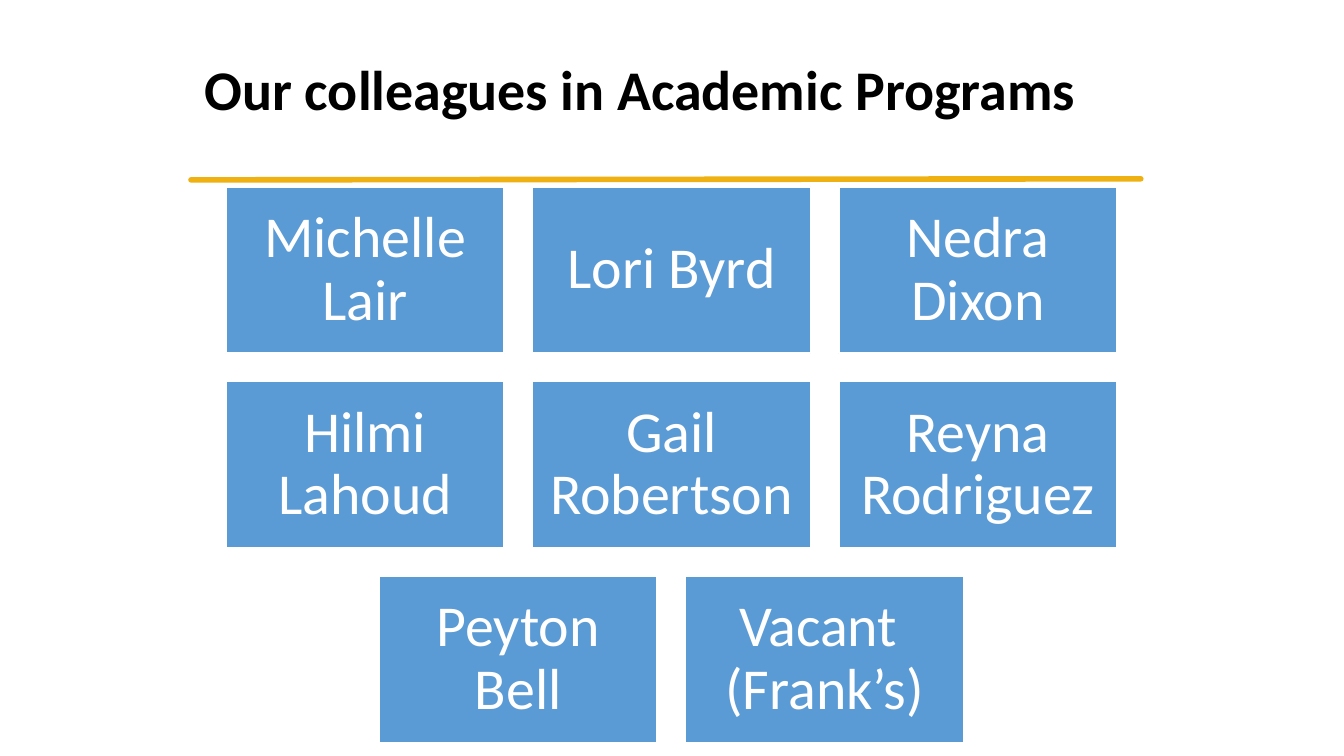
from pptx import Presentation
from pptx import util as u
from pptx.dml.color import RGBColor
from pptx.enum import shapes, text
from lxml import etree

Cm, Pt = u.Cm, u.Pt
A = "{http://schemas.openxmlformats.org/drawingml/2006/main}"

# Each row of names is centred on the same axis
ROWS = [
    ["Michelle Lair", "Lori Byrd", "Nedra Dixon"],
    ["Hilmi Lahoud", "Gail Robertson", "Reyna Rodriguez"],
    ["Peyton Bell", "Vacant \v(Frank’s)"],
]
CENTRE, TOP = 12.69, 3.53
BOX_W, BOX_H, GAP = 5.26, 3.15, 0.53


def rgb(value):
    return RGBColor.from_string(value)


def write(tf, content, size, color, bold=False, align=text.PP_ALIGN.LEFT):
    tf.word_wrap = True
    tf.auto_size = text.MSO_AUTO_SIZE.NONE
    tf.vertical_anchor = text.MSO_ANCHOR.MIDDLE
    p = tf.paragraphs[0]
    p.text = content
    p.alignment = align
    p.line_spacing = 0.9
    p.space_before = Pt(0)
    for r in p.runs:
        r.font.name = "Calibri"
        r.font.size = Pt(size)
        r.font.bold = bold
        r.font.color.rgb = rgb(color)


def add_title(s, content):
    sp = s.shapes.title
    sp.left, sp.top, sp.width, sp.height = Cm(3.61), Cm(0.36), Cm(20.45), Cm(2.77)
    write(sp.text_frame, content, 30, "000000", bold=True)


def add_rule(s):
    line = s.shapes.add_connector(
        shapes.MSO_CONNECTOR.STRAIGHT, Cm(3.61), Cm(3.4), Cm(21.56), Cm(3.38))
    line.line.color.rgb = rgb("EEB111")
    line.line.width = Pt(3)
    line.line._get_or_add_ln().set("cap", "rnd")
    etree.SubElement(line._element.spPr, A + "effectLst")


def add_name(s, name, left, top):
    sp = s.shapes.add_shape(
        shapes.MSO_SHAPE.RECTANGLE, Cm(left), Cm(top), Cm(BOX_W), Cm(BOX_H))
    sp.shadow.inherit = False
    sp.fill.solid()
    sp.fill.fore_color.rgb = rgb("5B9BD5")
    sp.line.color.rgb = rgb("FFFFFF")
    sp.line.width = Pt(1)
    tf = sp.text_frame
    tf.margin_left = tf.margin_right = tf.margin_top = tf.margin_bottom = Cm(0.33)
    write(tf, name, 31, "FFFFFF", align=text.PP_ALIGN.CENTER)


def main():
    prs = Presentation()
    prs.slide_width, prs.slide_height = Cm(25.4), Cm(14.29)
    s = prs.slides.add_slide(prs.slide_layouts[5])

    # Heading
    add_rule(s)
    add_title(s, "Our colleagues in Academic Programs")

    # Grid of names
    for i, row in enumerate(ROWS):
        left = CENTRE - (len(row) * (BOX_W + GAP) - GAP) / 2
        for j, name in enumerate(row):
            add_name(s, name, left + j * (BOX_W + GAP), TOP + i * (BOX_H + GAP))

    prs.save("out.pptx")


if __name__ == "__main__":
    main()
